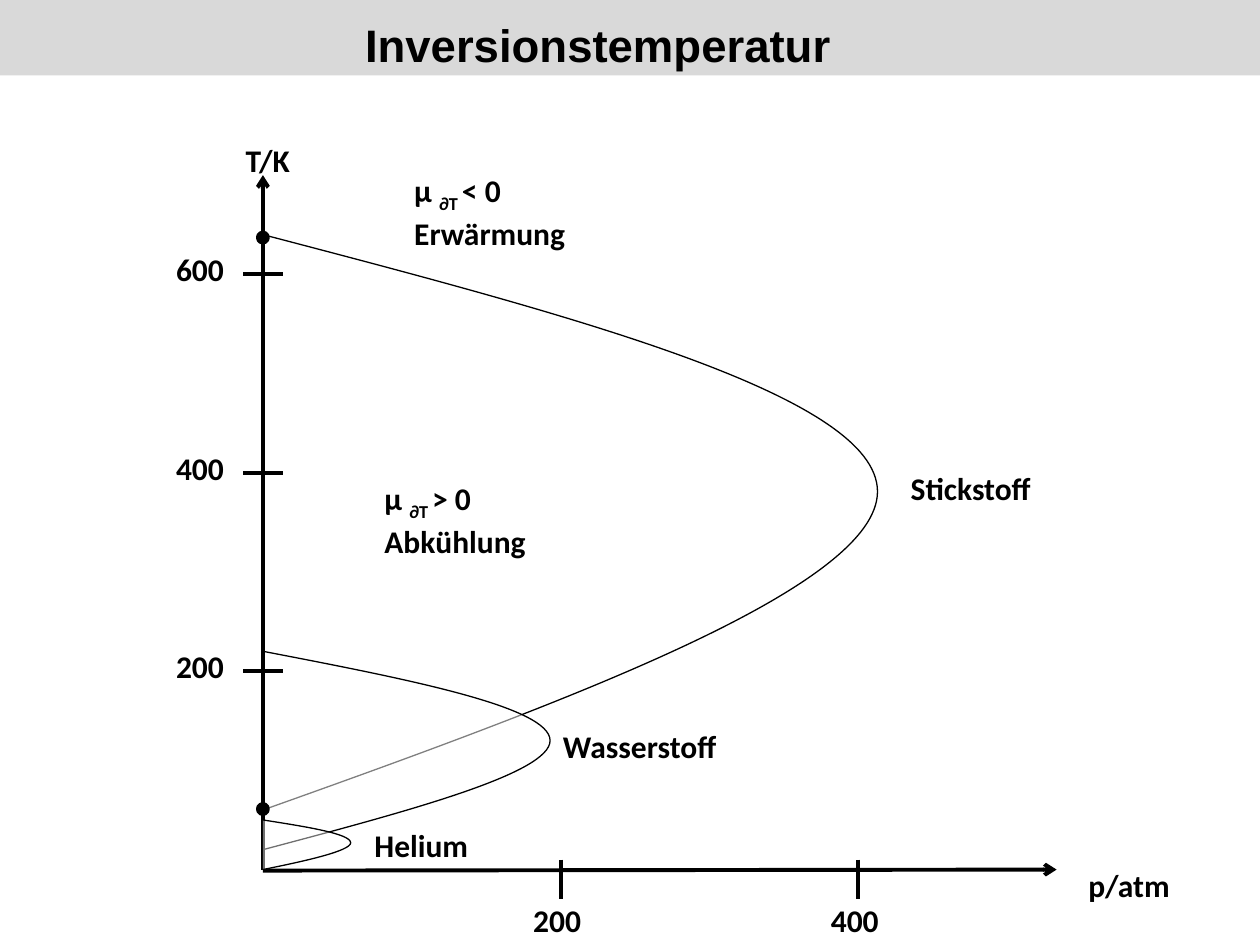
from pptx import Presentation
from pptx.dml.color import RGBColor
from pptx.enum.shapes import MSO_CONNECTOR as CONN, MSO_SHAPE as SHAPE
from pptx.enum.text import MSO_AUTO_SIZE as AUTO
from pptx.oxml.ns import qn
from pptx.util import Cm, Pt
from lxml.etree import SubElement

TITLE = [("Inversionstemperatur", 26), (" ", 32)]
T_TICKS = [(200, 1.8), (600, 1.5), (400, 1.5)]
P_TICKS = [200, 400]
NITROGEN = [(0, 640), (206, 559), (413, 478), (413, 381), (413, 285), (206, 170), (0, 60)]
HYDROGEN = [(0, 220), (97, 192), (193, 164), (193, 130), (193, 97), (98, 59), (0, 20)]
HELIUM = [(0, 50), (30, 43), (59, 36), (59, 27), (59, 19), (30, 9), (0, 0)]
INVERSION_POINTS = [637, 61]
LABELS = [
    ("p/atm", 21.69, 17.33, 3),
    ("Stickstoff", 18.11, 9.33, 3.4),
    ("T/K", 4.7, 2.72, 1.8),
    ("Wasserstoff", 11.1, 14.53, 5.8),
    ("Helium", 7.3, 16.53, 5.8),
]
REGIONS = [("> 0", "Abkühlung", 7.5, 9.53, 4.8), ("< 0", "Erwärmung", 8.1, 3.33, 5.8)]
X0, Y0 = 5.3, 17.53

prs = Presentation()
prs.slide_width, prs.slide_height = Cm(25.4), Cm(19.05)
s = prs.slides.add_slide(prs.slide_layouts[6])


def rgb(value):
    return RGBColor.from_string(value)


def px(p):
    return X0 + p * 6 / 200


def ty(t):
    return Y0 - t * 4 / 200


def paint(sp, fill, line=None, width=0.75, alpha=None):
    sp.shadow.inherit = False
    sp.fill.solid()
    sp.fill.fore_color.rgb = rgb(fill)
    if alpha:
        color = sp.fill._xPr.find(qn("a:solidFill"))[0]
        SubElement(color, qn("a:alpha")).set("val", str(alpha * 1000))
    if line:
        sp.line.color.rgb = rgb(line)
        sp.line.width = Pt(width)
    else:
        sp.line.fill.background()


def add_curve(points, alpha, close=False):
    pts = [(Cm(px(p)), Cm(ty(t))) for p, t in points]
    fb = s.shapes.build_freeform(*pts[0], scale=1.0)
    fb.add_line_segments(pts[3::3] + pts[:1] * close, close=close)
    sp = fb.convert_to_shape()
    segments = list(sp._element.iter(qn("a:lnTo")))
    for seg, first in zip(segments, (1, 4)):
        seg.tag = qn("a:cubicBezTo")
        for child in list(seg):
            seg.remove(child)
        for x, y in pts[first:first + 3]:
            pt = SubElement(seg, qn("a:pt"))
            pt.set("x", str(x - sp.left))
            pt.set("y", str(y - sp.top))
    paint(sp, "FFFFFF", "000000", alpha=alpha)


def add_line(x1, y1, x2, y2, arrow=False):
    c = s.shapes.add_connector(CONN.STRAIGHT, Cm(x1), Cm(y1), Cm(x2), Cm(y2))
    c.line.color.rgb = rgb("000000")
    c.line.width = Pt(2.25)
    if arrow:
        SubElement(c.line._get_or_add_ln(), qn("a:tailEnd")).set("type", "arrow")
    SubElement(c._element.spPr, qn("a:effectLst"))


def add_text(paragraphs, x, y, w, h=1.02, font="Calibri", wrap=True):
    tf = s.shapes.add_textbox(Cm(x), Cm(y), Cm(w), Cm(h)).text_frame
    tf.word_wrap = wrap
    tf.auto_size = AUTO.SHAPE_TO_FIT_TEXT
    for i, runs in enumerate(paragraphs):
        p = tf.add_paragraph() if i else tf.paragraphs[0]
        for text, size in runs:
            r = p.add_run()
            r.text = text
            r.font.name, r.font.size, r.font.bold = font, Pt(size), True
            r.font.color.rgb = rgb("000000")
    return tf


add_curve(NITROGEN, 85, close=True)
add_curve(HYDROGEN, 50)
add_line(X0, Y0, X0, 3.53, arrow=True)
add_line(X0, Y0 + 0.02, 21.3, Y0, arrow=True)

bar = s.shapes.add_shape(SHAPE.RECTANGLE, 0, 0, prs.slide_width, Cm(1.52))
paint(bar, "D9D9D9")

for t, w in T_TICKS:
    add_line(X0 - 0.4, ty(t), X0 + 0.4, ty(t))
    add_text([[(str(t), 18)]], 3.3, ty(t) - 0.61, w, wrap=w > 1.5)
for p in P_TICKS:
    add_line(px(p), Y0 - 0.2, px(p), Y0 + 0.6)
    add_text([[(str(p), 18)]], px(p) - 0.8, 18.03, 1.8)

add_curve(HELIUM, 44)

for sign, effect, x, y, w in REGIONS:
    runs = [("μ ", 18), ("∂T ", 18), (sign, 18)]
    tf = add_text([runs, [(effect, 18)]], x, y, w, 1.8)
    tf.paragraphs[0].runs[1].font._element.set("baseline", "-25000")
for text, x, y, w in LABELS:
    add_text([[(text, 18)]], x, y, w)
add_text([TITLE], 7.11, 0, 10.31, 1.62, "Arial", wrap=False)

for t in INVERSION_POINTS:
    dot = s.shapes.add_shape(SHAPE.OVAL, Cm(X0 - 0.1), Cm(ty(t) - 0.1), Cm(0.2), Cm(0.2))
    paint(dot, "000000", "000000", 2.25)

prs.save("out.pptx")
